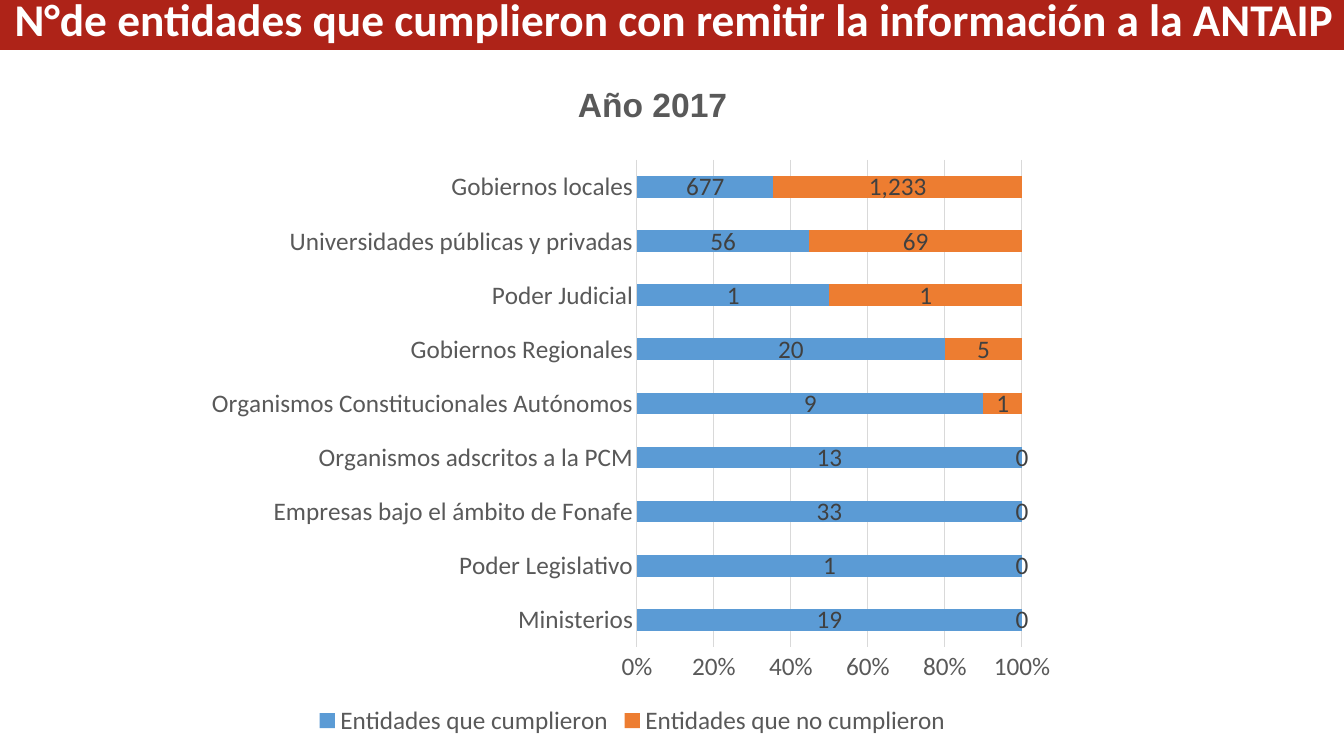
"""Build the slide on entities that sent their information in 2017."""
from lxml import etree
from pptx import Presentation
from pptx import util as u
from pptx.chart.data import CategoryChartData
from pptx.dml.color import RGBColor
from pptx.enum import chart as charts, shapes, text
from pptx.oxml.ns import qn

SCALE = 12192000 / 1344
RED = RGBColor(0xAE, 0x23, 0x18)
WHITE = RGBColor(0xFF, 0xFF, 0xFF)
GREY = RGBColor(0x59, 0x59, 0x59)
DARK = RGBColor(0x40, 0x40, 0x40)
PALE = RGBColor(0xD9, 0xD9, 0xD9)
BLUE = RGBColor(0x5B, 0x9B, 0xD5)
ORANGE = RGBColor(0xED, 0x7D, 0x31)


def px(*lengths):
    return [u.Emu(round(length * SCALE)) for length in lengths]


def write(shape, words, size, font, color, align, spacing=1.0, wrap=True):
    frame = shape.text_frame
    frame.word_wrap = wrap
    frame.vertical_anchor = text.MSO_ANCHOR.MIDDLE
    paragraph = frame.paragraphs[0]
    paragraph.alignment = align
    paragraph.line_spacing = spacing
    run = paragraph.add_run()
    run.text = words
    run.font.size, run.font.name, run.font.bold = u.Pt(size), font, True
    run.font.color.rgb = color


presentation = Presentation()
presentation.slide_width, presentation.slide_height = px(1344, 756)
slide = presentation.slides.add_slide(presentation.slide_layouts[6])

entities = [
    ("Ministerios", 19, 0),
    ("Poder Legislativo", 1, 0),
    ("Empresas bajo el ámbito de Fonafe", 33, 0),
    ("Organismos adscritos a la PCM", 13, 0),
    ("Organismos Constitucionales Autónomos", 9, 1),
    ("Gobiernos Regionales", 20, 5),
    ("Poder Judicial", 1, 1),
    ("Universidades públicas y privadas", 56, 69),
    ("Gobiernos locales", 677, 1233),
]
names, complied, missed = zip(*entities)
data = CategoryChartData(number_format="#,##0")
data.categories = names
data.add_series("Entidades que cumplieron", complied)
data.add_series("Entidades que no cumplieron", missed)
chart = slide.shapes.add_chart(
    charts.XL_CHART_TYPE.BAR_STACKED_100, *px(196, 148, 873, 593), data).chart
chart.has_title = False
chart.has_legend = True
chart.legend.position = charts.XL_LEGEND_POSITION.BOTTOM
chart.legend.include_in_layout = False

category_axis, value_axis = chart.category_axis, chart.value_axis
for axis in (category_axis, value_axis):
    axis.major_tick_mark = axis.minor_tick_mark = charts.XL_TICK_MARK.NONE
category_axis.format.line.color.rgb = PALE
category_axis.format.line.width = u.Pt(0.75)
value_axis.format.line.fill.background()
value_axis.has_major_gridlines = True
value_axis.major_gridlines.format.line.color.rgb = PALE
value_axis.major_gridlines.format.line.width = u.Pt(0.75)
value_axis.maximum_scale, value_axis.major_unit = 1, 0.2
value_axis.tick_labels.number_format = "0%"
value_axis.tick_labels.number_format_is_linked = False

plot = chart.plots[0]
plot.gap_width, plot.overlap = 150, 100
plot.vary_by_categories = False
fonts = [(chart.font, GREY), (chart.legend.font, GREY),
         (category_axis.tick_labels.font, GREY), (value_axis.tick_labels.font, GREY)]
for series, color in zip(plot.series, (BLUE, ORANGE)):
    series.format.fill.solid()
    series.format.fill.fore_color.rgb = color
    labels = series.data_labels
    labels.show_value = True
    labels.number_format = "#,##0"
    labels.number_format_is_linked = False
    fonts.append((labels.font, DARK))
for font, color in fonts:
    font.size, font.name = u.Pt(18), "Calibri"
    font.color.rgb = color

plot_area = chart.element.find(".//" + qn("c:plotArea"))
for old_layout in plot_area.findall(qn("c:layout")):
    plot_area.remove(old_layout)
layout = etree.Element(qn("c:layout"))
plot_area.insert(0, layout)
manual = etree.SubElement(layout, qn("c:manualLayout"))
for tag, value in [("layoutTarget", "inner"), ("xMode", "edge"), ("yMode", "edge"),
                   ("x", 441 / 873), ("y", 12 / 593), ("w", 385 / 873), ("h", 487 / 593)]:
    etree.SubElement(manual, qn("c:" + tag), val=str(value))

year = slide.shapes.add_textbox(*px(567, 79, 171, 50))
write(year, "Año 2017", 24, "Arial", GREY, text.PP_ALIGN.CENTER, wrap=False)
year.text_frame.vertical_anchor = text.MSO_ANCHOR.TOP
year.text_frame.auto_size = text.MSO_AUTO_SIZE.SHAPE_TO_FIT_TEXT

banner = slide.shapes.add_shape(shapes.MSO_SHAPE.RECTANGLE, *px(0, 0, 1344, 50))
banner.shadow.inherit = False
banner.fill.solid()
banner.fill.fore_color.rgb = RED
banner.line.fill.background()
write(banner, "N°de entidades que cumplieron con remitir la información a la ANTAIP",
      32.4, "Calibri", WHITE, text.PP_ALIGN.RIGHT, spacing=0.7)

presentation.save("out.pptx")
